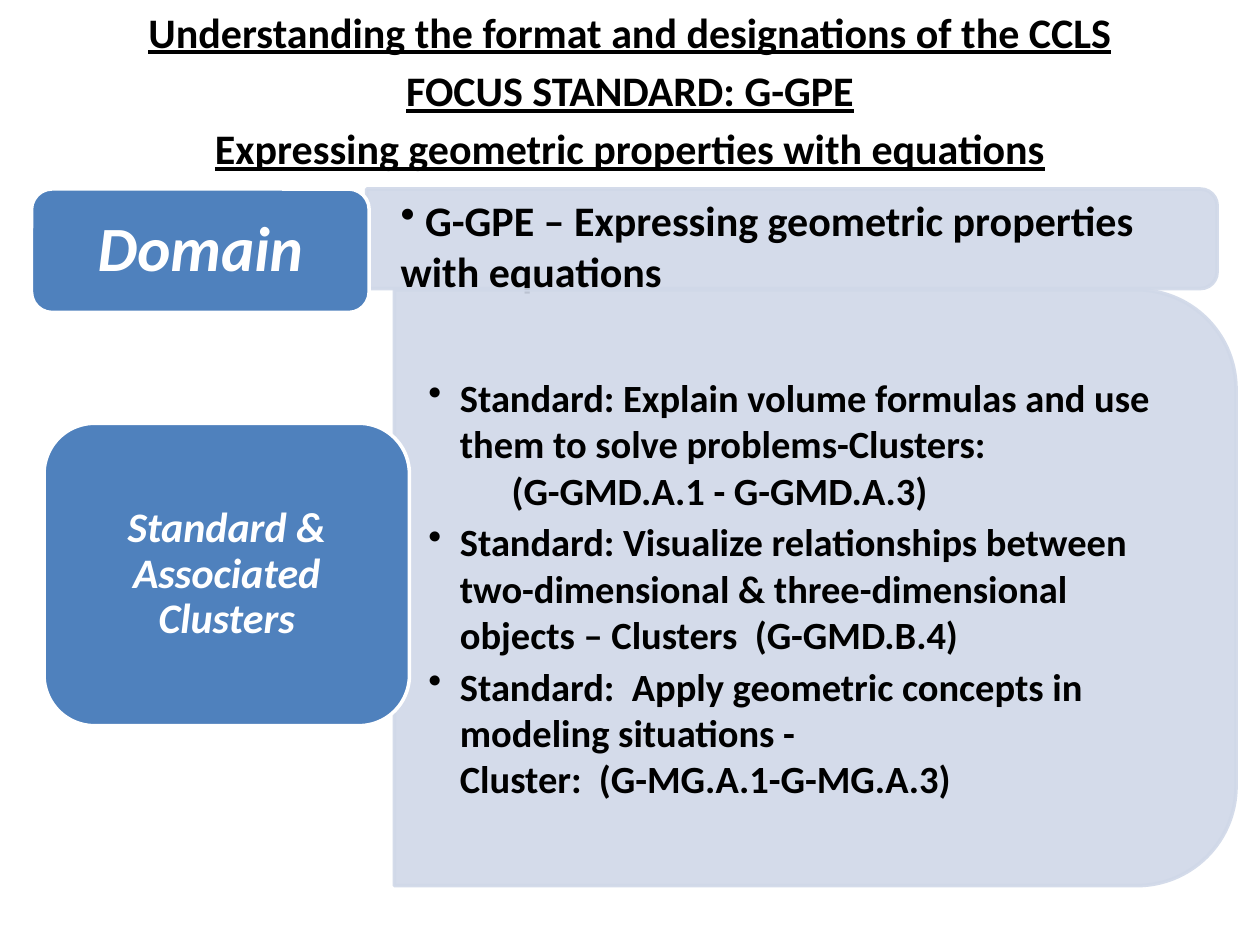
"""Build the slide on the format and designations of the CCLS."""
import pptx
import pptx.dml.color
import pptx.enum.shapes
import pptx.enum.text
import pptx.oxml
import pptx.oxml.ns
import pptx.util
from pptx.util import Inches

COLORS = {"blue": "4F81BD", "pale": "D0D8E8", "white": "FFFFFF", "black": "000000"}
SHAPES = pptx.enum.shapes.MSO_SHAPE
CENTER = pptx.enum.text.PP_ALIGN.CENTER
MIDDLE = pptx.enum.text.MSO_ANCHOR.MIDDLE


def add_block(kind, left, top, width, height, fill, line):
    sp = s.shapes.add_shape(kind, Inches(left), Inches(top), Inches(width), Inches(height))
    sp.shadow.inherit = False
    sp.fill.solid()
    sp.fill.fore_color.rgb = pptx.dml.color.RGBColor.from_string(COLORS[fill])
    sp.line.color.rgb = pptx.dml.color.RGBColor.from_string(COLORS[line])
    sp.line.width = pptx.util.Pt(2)
    return sp


def write(tf, paragraphs, size, color, inset, anchor=MIDDLE):
    tf.word_wrap = True
    tf.vertical_anchor = anchor
    tf.margin_left = tf.margin_right = Inches(inset[0])
    tf.margin_top = tf.margin_bottom = Inches(inset[1])
    for i, text in enumerate(paragraphs):
        p = tf.paragraphs[0] if i == 0 else tf.add_paragraph()
        p.text = text
        p.font.name = "Calibri"
        p.font.size = pptx.util.Pt(size)
        p.font.bold = True
        p.font.color.rgb = pptx.dml.color.RGBColor.from_string(COLORS[color])
    return tf.paragraphs


prs = pptx.Presentation()
prs.slide_width, prs.slide_height = Inches(10), Inches(7.5)
s = prs.slides.add_slide(prs.slide_layouts[6])

title = [
    "Understanding the format and designations of the CCLS",
    "FOCUS STANDARD: G-GPE",
    "Expressing geometric properties with equations",
]
tb = s.shapes.add_textbox(0, 0, Inches(10), Inches(1.45))
top_anchor = pptx.enum.text.MSO_ANCHOR.TOP
for i, p in enumerate(write(tb.text_frame, title, 24, "black", (0.1, 0.05), top_anchor)):
    p.alignment = CENTER
    p.font.underline = True
    if i:
        p.space_before = pptx.util.Pt(4.5)

domain = [("G-GPE – Expressing geometric properties with equations", 0, 0, True)]
standards = [
    ("Standard: Explain volume formulas and use them to solve problems-Clusters:", 0.25, 0, True),
    ("(G-GMD.A.1 - G-GMD.A.3)", 0.66, 3.3, False),
    ("Standard: Visualize relationships between two-dimensional & three-dimensional "
     "objects – Clusters  (G-GMD.B.4)", 0.25, 3.3, True),
    ("Standard:  Apply geometric concepts in modeling situations -\v"
     "Cluster:  (G-MG.A.1-G-MG.A.3)", 0.25, 0, True),
]
rows = [
    ((2.91, 1.5, 6.75, 0.79), (2.91, 1.59, 6.71, 0.71), domain, 24,
     (0.25, 1.5, 2.68, 0.98), "Domain", 36, (0.15, 0.07)),
    ((3.13, 2.3, 6.68, 4.73), (3.13, 2.53, 6.45, 4.27), standards, 22,
     (0.35, 3.36, 2.9, 2.4), "Standard & Associated Clusters", 24, (0.1, 0.05)),
]
for panel, text_box, items, size, label_box, label, label_size, label_inset in rows:
    left, top, width, height = panel
    shift = (width - height) / 2
    sp = add_block(SHAPES.ROUND_2_SAME_RECTANGLE, left + shift, top - shift,
                   height, width, "pale", "pale")
    sp.rotation = 90
    for clr in sp._element.spPr.iter(pptx.oxml.ns.qn("a:srgbClr")):
        pptx.oxml.ns.qn("a:alpha")
        alpha = clr.makeelement(pptx.oxml.ns.qn("a:alpha"), {"val": "90000"})
        clr.append(alpha)

    tb = s.shapes.add_textbox(*map(Inches, text_box))
    paragraphs = write(tb.text_frame, [item[0] for item in items], size, "black", (0.27, 0.14))
    for p, (text, indent, after, bulleted) in zip(paragraphs, items):
        p.space_after = pptx.util.Pt(after)
        pPr = p._p.get_or_add_pPr()
        pPr.set("marL", str(Inches(indent)))
        pPr.set("indent", str(-Inches(indent) if bulleted else 0))
        if bulleted:
            bullet = pPr.makeelement(pptx.oxml.ns.qn("a:buChar"), {"char": "•"})
            pPr.insert_element_before(bullet, "a:tabLst", "a:defRPr", "a:extLst")
        if bulleted and not indent:
            p.runs[0].text = " " + text

    sp = add_block(SHAPES.ROUNDED_RECTANGLE, *label_box, "blue", "white")
    p = write(sp.text_frame, [label], label_size, "white", label_inset)[0]
    p.alignment = CENTER
    p.line_spacing = 0.9
    p.font.italic = True

prs.save("out.pptx")
